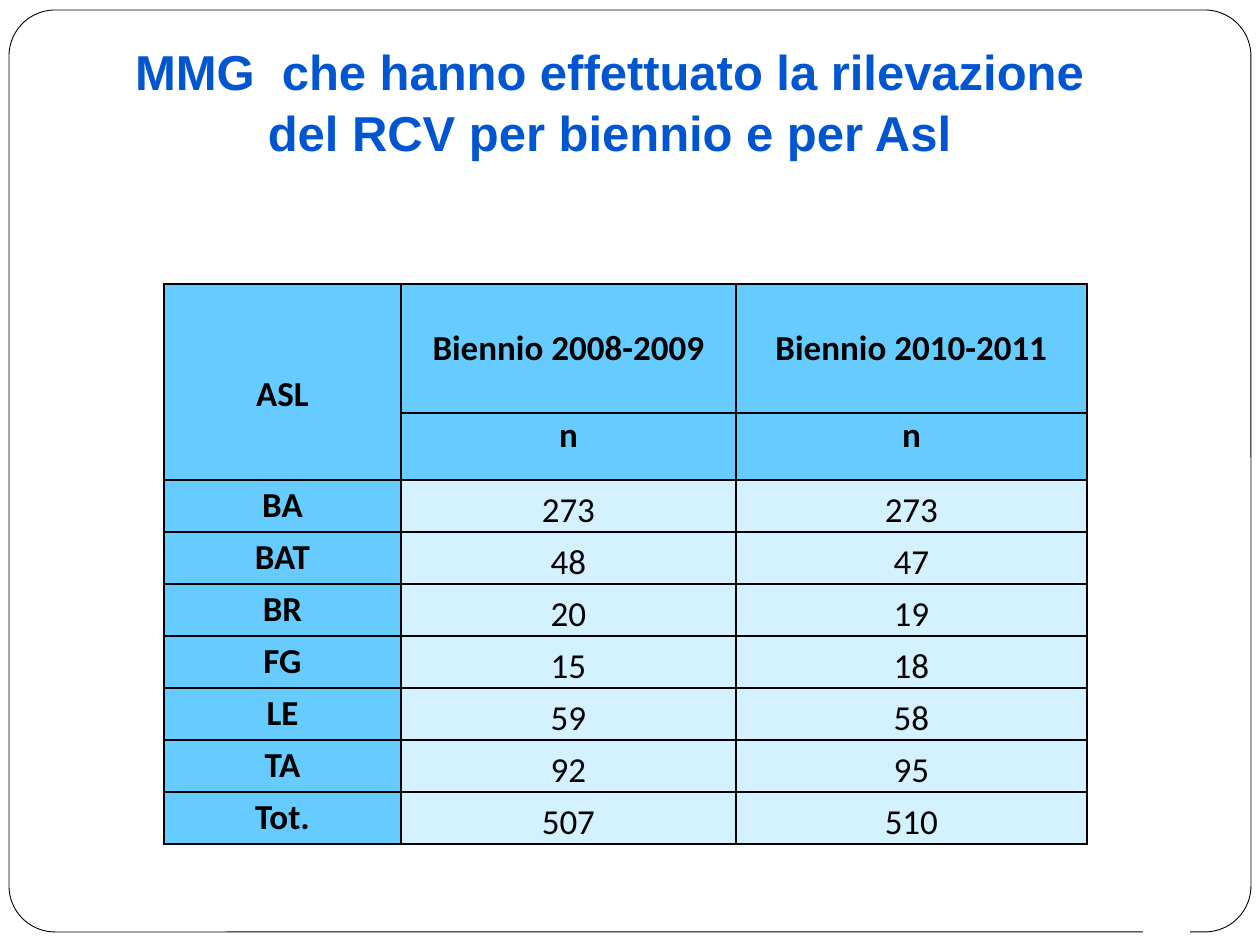
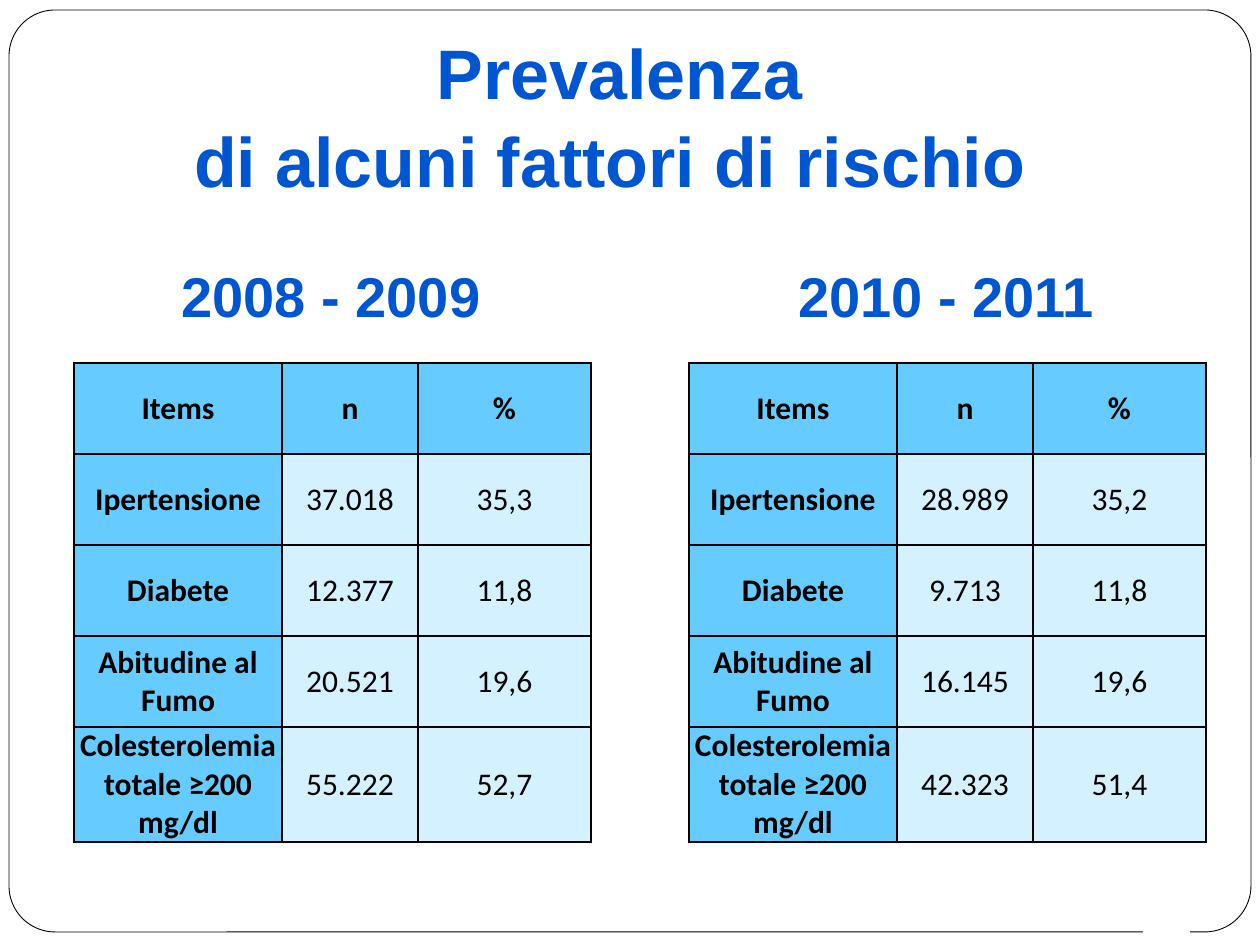
from dataclasses import dataclass

from lxml.etree import SubElement
from pptx import Presentation
from pptx.dml.color import RGBColor
from pptx.enum.shapes import MSO_SHAPE
from pptx.enum.text import MSO_ANCHOR, PP_ALIGN
from pptx.oxml.ns import qn
from pptx.util import Emu, Pt


@dataclass(frozen=True)
class Theme:
    ink = RGBColor(0, 0, 0)
    paper = RGBColor(255, 255, 255)
    blue = RGBColor(0x00, 0x55, 0xD1)
    head = RGBColor(0x66, 0xCC, 0xFF)
    body = RGBColor(0xD4, 0xF1, 0xFF)
    title_face = "Arial"
    table_face = "Calibri"
    title = 28
    big = 40
    period = 32
    table = 20
    small = 18


theme = Theme()
SCALE = 914400 / 126


def px(*sizes):
    return [Emu(round(size * SCALE)) for size in sizes]


def write(frame, text, font, para):
    """Put text in a frame and apply the font and paragraph values."""
    frame.text = text
    part = frame.paragraphs[0]
    for key, value in para.items():
        setattr(part, key, value)
    part.font.color.rgb = font["color"]
    for key in ("name", "size", "bold"):
        setattr(part.font, key, font[key])


centre = {"alignment": PP_ALIGN.CENTER}
tight = {**centre, "line_spacing": Pt(12)}

doctors = [
    ["ASL", "Biennio 2008-2009", "Biennio 2010-2011"],
    [None, "n", "n"],
    ["BA", "273", "273"],
    ["BAT", "48", "47"],
    ["BR", "20", "19"],
    ["FG", "15", "18"],
    ["LE", "59", "58"],
    ["TA", "92", "95"],
    ["Tot.", "507", "510"],
]
items = ["Ipertensione", "Diabete", "Abitudine al Fumo",
         "Colesterolemia totale ≥200 mg/dl"]
first = [("37.018", "35,3"), ("12.377", "11,8"),
         ("20.521", "19,6"), ("55.222", "52,7")]
second = [("28.989", "35,2"), ("9.713", "11,8"),
          ("16.145", "19,6"), ("42.323", "51,4")]

risk = {"top": 363, "cols": [208, 136, 173], "rows": [91] * 4 + [115],
        "heads": 1, "size": theme.small, "pad": 2,
        "para": centre, "anchor": MSO_ANCHOR.MIDDLE}
risks = [
    {**risk, "left": left,
     "data": [["Items", "n", "%"]] + [[item, *pair] for item, pair in zip(items, pairs)]}
    for left, pairs in ((74, first), (689, second))
]
survey = {"left": 164, "top": 284, "cols": [237, 335, 351],
          "rows": [129, 67] + [52] * 7, "heads": 2, "size": theme.table,
          "pad": 9, "para": tight, "anchor": MSO_ANCHOR.BOTTOM, "data": doctors}

slides = [
    {"title": "MMG  che hanno effettuato la rilevazione\vdel RCV per biennio e per Asl",
     "size": theme.title, "box": (74, 9, 1071, 189), "periods": [], "tables": [survey]},
    {"title": "Prevalenza\vdi alcuni fattori di rischio ",
     "size": theme.big, "box": (84, 38, 1071, 158),
     "periods": [("2008 - 2009", 169, 328), ("2010 - 2011", 786, 323)],
     "tables": risks},
]

deck = Presentation()
deck.slide_width, deck.slide_height = px(1260, 945)

for page in slides:
    slide = deck.slides.add_slide(deck.slide_layouts[6])
    shapes = slide.shapes

    # Rounded page border, with a white gap at the lower right
    border = shapes.add_shape(MSO_SHAPE.ROUNDED_RECTANGLE, *px(9, 10, 1242, 922))
    border.adjustments[0] = 0.05
    border.line.color.rgb = theme.ink
    border.line.width = Pt(0.5)
    gap = shapes.add_shape(MSO_SHAPE.RECTANGLE, *px(1143, 886, 47, 47))
    gap.line.fill.background()
    for shape in (border, gap):
        shape.shadow.inherit = False
        shape.fill.solid()
        shape.fill.fore_color.rgb = theme.paper

    # Title and period headings
    font = {"name": theme.title_face, "size": Pt(page["size"]),
            "bold": True, "color": theme.blue}
    frame = shapes.add_textbox(*px(*page["box"])).text_frame
    frame.word_wrap = True
    frame.vertical_anchor = MSO_ANCHOR.MIDDLE
    frame.margin_bottom = px(13)[0]
    write(frame, page["title"], font, {**centre, "line_spacing": 1.05})
    for label, left, width in page["periods"]:
        frame = shapes.add_textbox(*px(left, 255, width, 81)).text_frame
        frame.word_wrap = False
        write(frame, label, {**font, "size": Pt(theme.period)}, {})

    # Tables
    for plan in page["tables"]:
        data, cols, rows = plan["data"], plan["cols"], plan["rows"]
        place = px(plan["left"], plan["top"], sum(cols), sum(rows))
        table = shapes.add_table(len(rows), len(cols), *place).table
        table.first_row = table.horz_banding = False
        for col, width in zip(table.columns, px(*cols)):
            col.width = width
        for row, height in zip(table.rows, px(*rows)):
            row.height = height
        for r, line in enumerate(data):
            for c, text in enumerate(line):
                cell = table.cell(r, c)
                label = r < plan["heads"] or c == 0
                pad, none = px(plan["pad"], 0)
                look = {"margin_left": pad, "margin_right": pad,
                        "margin_top": none, "margin_bottom": none,
                        "vertical_anchor": MSO_ANCHOR.MIDDLE if label else plan["anchor"]}
                for key, value in look.items():
                    setattr(cell, key, value)
                props = cell._tc.get_or_add_tcPr()
                for side in ("lnL", "lnR", "lnT", "lnB"):
                    edge = SubElement(props, qn(f"a:{side}"), w=str(Pt(1)))
                    fill = SubElement(edge, qn("a:solidFill"))
                    SubElement(fill, qn("a:srgbClr"), val=str(theme.ink))
                cell.fill.solid()
                cell.fill.fore_color.rgb = theme.head if label else theme.body
                if text is not None:
                    font = {"name": theme.table_face, "size": Pt(plan["size"]),
                            "bold": label, "color": theme.ink}
                    write(cell.text_frame, text, font,
                          plan["para"] if r and c else centre)
        if plan["heads"] == 2:
            corner = table.cell(0, 0)
            corner.merge(table.cell(1, 0))
            corner.margin_top = Pt(14)

deck.save("out.pptx")
